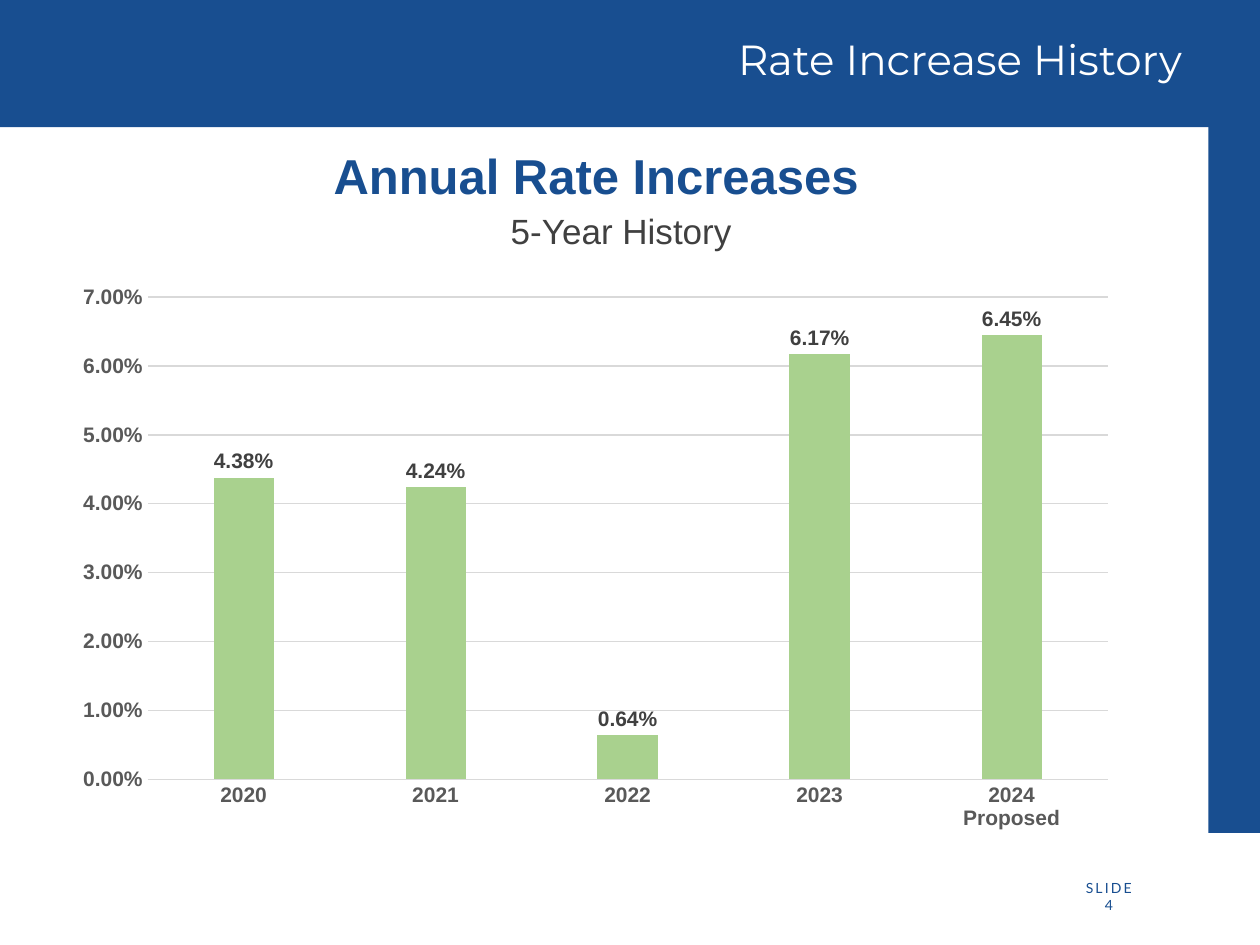
from dataclasses import dataclass

from pptx import Presentation
from pptx.chart.data import CategoryChartData
from pptx.dml.color import RGBColor
from pptx.enum.chart import XL_CHART_TYPE, XL_LABEL_POSITION, XL_TICK_MARK
from pptx.enum.shapes import MSO_SHAPE
from pptx.enum.text import MSO_ANCHOR, PP_ALIGN
from pptx.util import Inches, Pt


@dataclass(frozen=True)
class Theme:
    navy: str = "184E90"
    white: str = "FFFFFF"
    green: str = "A9D18E"
    dark: str = "404040"
    gray: str = "595959"
    rule: str = "D9D9D9"
    head: str = "Montserrat"
    body: str = "Arial"
    foot: str = "Lato"
    title: int = 24
    lead: int = 28
    sub: int = 20
    label: int = 12
    small: int = 8


THEME = Theme()
WIDE, HIGH = 10, 7.5
BAND = 1.01
RATES = {
    "2020": 0.0438,
    "2021": 0.0424,
    "2022": 0.0064,
    "2023": 0.0617,
    "2024\nProposed": 0.0645,
}


def color(code):
    return RGBColor.from_string(code)


def style(font, name, size, code, bold=False):
    font.name, font.size, font.bold = name, Pt(size), bold
    font.color.rgb = color(code)


def add_bar(slide, *box):
    bar = slide.shapes.add_shape(MSO_SHAPE.RECTANGLE, *map(Inches, box))
    bar.shadow.inherit = False
    bar.fill.solid()
    bar.fill.fore_color.rgb = color(THEME.navy)
    bar.line.fill.background()


def add_box(slide, *box):
    frame = slide.shapes.add_textbox(*map(Inches, box)).text_frame
    frame.word_wrap = True
    return frame


def add_title(slide, text):
    title = slide.shapes.title
    slide.shapes._spTree.append(title._element)  # bring in front of the band
    title.left, title.top, title.width, title.height = map(
        Inches, (0.14, 0.26, 9.34, 0.63))
    frame = title.text_frame
    frame.text = text
    frame.vertical_anchor = MSO_ANCHOR.TOP
    para = frame.paragraphs[0]
    para.alignment, para.line_spacing = PP_ALIGN.RIGHT, 0.9
    style(para.runs[0].font, THEME.head, THEME.title, THEME.white)


def add_lead(slide, text, sub):
    frame = add_box(slide, 0.19, 1.16, 9.08, 1)
    frame.text = f"{text}\n{sub}"
    lead, note = frame.paragraphs
    for para in (lead, note):
        para.alignment, para.line_spacing = PP_ALIGN.CENTER, 0.9
    note.space_before = Pt(5)
    note._p.get_or_add_pPr().set("marL", str(Inches(0.4)))
    style(lead.runs[0].font, THEME.body, THEME.lead, THEME.navy, True)
    style(note.runs[0].font, THEME.body, THEME.sub, THEME.dark)


def add_foot(slide, text, box, align, anchor):
    frame = add_box(slide, *box)
    frame.text = text
    frame.vertical_anchor = anchor
    para = frame.paragraphs[0]
    para.alignment = align
    run = para.runs[0]
    style(run.font, THEME.foot, THEME.small, THEME.navy)
    run._r.get_or_add_rPr().set("spc", "120")


def style_axis(axis):
    axis.major_tick_mark = axis.minor_tick_mark = XL_TICK_MARK.NONE
    style(axis.tick_labels.font, THEME.body, THEME.label, THEME.gray, True)


def style_rule(line):
    line.color.rgb, line.width = color(THEME.rule), Pt(0.75)


def add_rates(slide, rates):
    data = CategoryChartData(number_format="0.00%")
    data.categories = list(rates)
    data.add_series("Series 1", list(rates.values()))
    chart = slide.shapes.add_chart(
        XL_CHART_TYPE.COLUMN_CLUSTERED,
        *map(Inches, (0.49, 2.18, 8.47, 4.49)), data).chart
    chart.has_title = chart.has_legend = False

    years, scale = chart.category_axis, chart.value_axis
    for axis in (years, scale):
        style_axis(axis)
    style_rule(years.format.line)
    scale.format.line.fill.background()
    style_rule(scale.major_gridlines.format.line)
    scale.minimum_scale, scale.maximum_scale, scale.major_unit = 0, 0.07, 0.01
    scale.tick_labels.number_format = "0.00%"
    scale.tick_labels.number_format_is_linked = False

    plot = chart.plots[0]
    plot.gap_width, plot.overlap, plot.vary_by_categories = 219, -27, False
    bars = plot.series[0]
    bars.format.fill.solid()
    bars.format.fill.fore_color.rgb = color(THEME.green)
    labels = bars.data_labels
    labels.show_value = True
    labels.position = XL_LABEL_POSITION.OUTSIDE_END
    labels.number_format, labels.number_format_is_linked = "0.00%", False
    style(labels.font, THEME.body, THEME.label, THEME.dark, True)


def main():
    deck = Presentation()
    deck.slide_width, deck.slide_height = Inches(WIDE), Inches(HIGH)
    slide = deck.slides.add_slide(deck.slide_layouts[5])
    add_bar(slide, WIDE - 0.41, 0, 0.41, 6.61)
    add_bar(slide, 0, 0, WIDE, BAND)
    add_title(slide, "Rate Increase History")
    add_lead(slide, "Annual Rate Increases", "5-Year History")
    add_rates(slide, RATES)
    add_foot(slide, "SLIDE", (8.19, 6.93, 0.89, 0.24),
             PP_ALIGN.RIGHT, MSO_ANCHOR.MIDDLE)
    add_foot(slide, "4", (8.67, 7.07, 0.68, 0.36),
             PP_ALIGN.LEFT, MSO_ANCHOR.TOP)
    deck.save("out.pptx")


if __name__ == "__main__":
    main()
